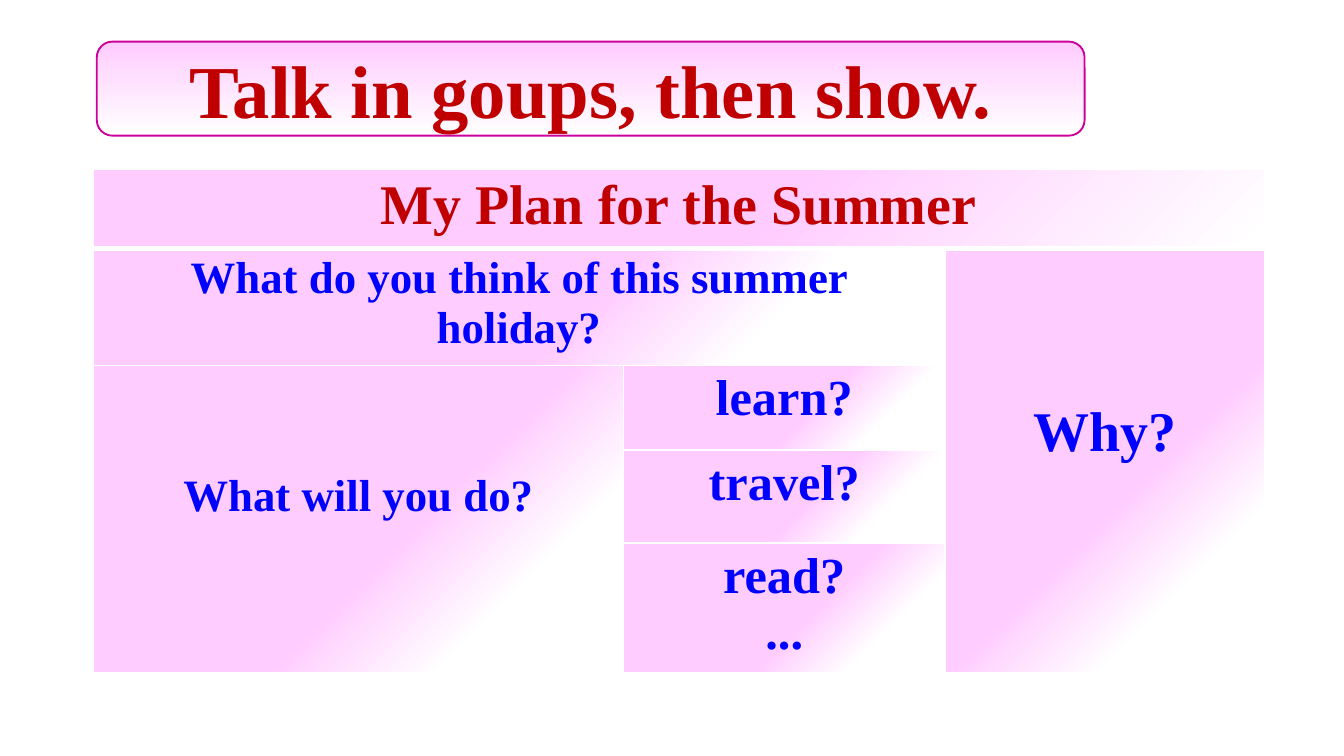
from pptx import Presentation
from pptx.dml.color import RGBColor
from pptx.enum.shapes import MSO_SHAPE
from pptx.enum.text import PP_ALIGN, MSO_ANCHOR
from pptx.oxml import parse_xml
from pptx.oxml.ns import nsdecls
from pptx.util import Inches, Pt

COLORS = {"pink": "FFCCFF", "white": "FFFFFF", "red": "C00000",
          "blue": "0000FF", "magenta": "CC0099"}
FONT = "Times New Roman"


def fade(fill, start, end, angle):
    """Pink-to-white gradient; the angle runs counter-clockwise."""
    fill.gradient()
    fill.gradient_angle = angle
    for stop, position, color in zip(fill.gradient_stops, (start, end), ("pink", "white")):
        stop.position = position
        stop.color.rgb = RGBColor.from_string(COLORS[color])


def write(frame, text, size, color):
    frame.text = text
    for paragraph in frame.paragraphs:
        paragraph.alignment = PP_ALIGN.CENTER
        paragraph.font.name = FONT
        paragraph.font.size = Pt(size)
        paragraph.font.bold = True
        paragraph.font.color.rgb = RGBColor.from_string(COLORS[color])


# Widescreen slide, 16:9
prs = Presentation()
prs.slide_width = Inches(10)
prs.slide_height = prs.slide_width * 9 // 16
slide = prs.slides.add_slide(prs.slide_layouts[6])

# Plan table
column_widths = [3.95, 2.39, 2.38]
row_heights = [0.59, 0.87, 0.63, 0.69, 0.97]
plan = slide.shapes.add_table(
    len(row_heights), len(column_widths), Inches(0.69), Inches(1.26),
    Inches(sum(column_widths)), Inches(sum(row_heights))).table
for column, width in zip(plan.columns, column_widths):
    column.width = Inches(width)
for row, height in zip(plan.rows, row_heights):
    row.height = Inches(height)

# Row, column, last row, last column, text, size, colour, top margin, fade end
topics = [
    (0, 0, 0, 2, "My Plan for the Summer", 30, "red", 0.04, 0.99),
    (1, 0, 1, 1, "What do you think of this summer holiday?", 24, "blue", 0.04, 0.78),
    (1, 2, 4, 2, "Why?", 30, "blue", 1.14, 0.78),
    (2, 0, 4, 0, "What will you do?", 24, "blue", 0.79, 0.78),
    (2, 1, 2, 1, "learn?", 27, "blue", 0.04, 0.78),
    (3, 1, 3, 1, "travel?", 27, "blue", 0.04, 0.78),
    (4, 1, 4, 1, "read?\n...", 27, "blue", 0.04, 0.78),
]
for row, col, last_row, last_col, text, size, color, top, fade_end in topics:
    topic = plan.cell(row, col)
    if (row, col) != (last_row, last_col):
        topic.merge(plan.cell(last_row, last_col))
    topic.margin_top, topic.margin_bottom = Inches(top), Inches(0.04)
    fade(topic.fill, 0.57, fade_end, 315)
    write(topic.text_frame, text, size, color)

# White cell borders, thicker below the heading row
for row in range(len(row_heights)):
    for col in range(len(column_widths)):
        properties = plan.cell(row, col)._tc.get_or_add_tcPr()
        for place, side in enumerate("LRTB"):
            thick = (row, side) in [(0, "B"), (1, "T")]
            properties.insert(place, parse_xml(
                f'<a:ln{side} {nsdecls("a")} w="{Pt(3 if thick else 1)}"><a:solidFill>'
                f'<a:srgbClr val="{COLORS["white"]}"/></a:solidFill></a:ln{side}>'))

# Title banner
banner = slide.shapes.add_shape(
    MSO_SHAPE.ROUNDED_RECTANGLE, Inches(0.72), Inches(0.31), Inches(7.35), Inches(0.7))
banner.shadow.inherit = False
fade(banner.fill, 0, 0.99, 270)
banner.line.color.rgb = RGBColor.from_string(COLORS["magenta"])
banner.line.width = Pt(1)
write(banner.text_frame, "Talk in goups, then show.", 40, "red")
banner.text_frame.vertical_anchor = MSO_ANCHOR.MIDDLE

prs.save("out.pptx")
